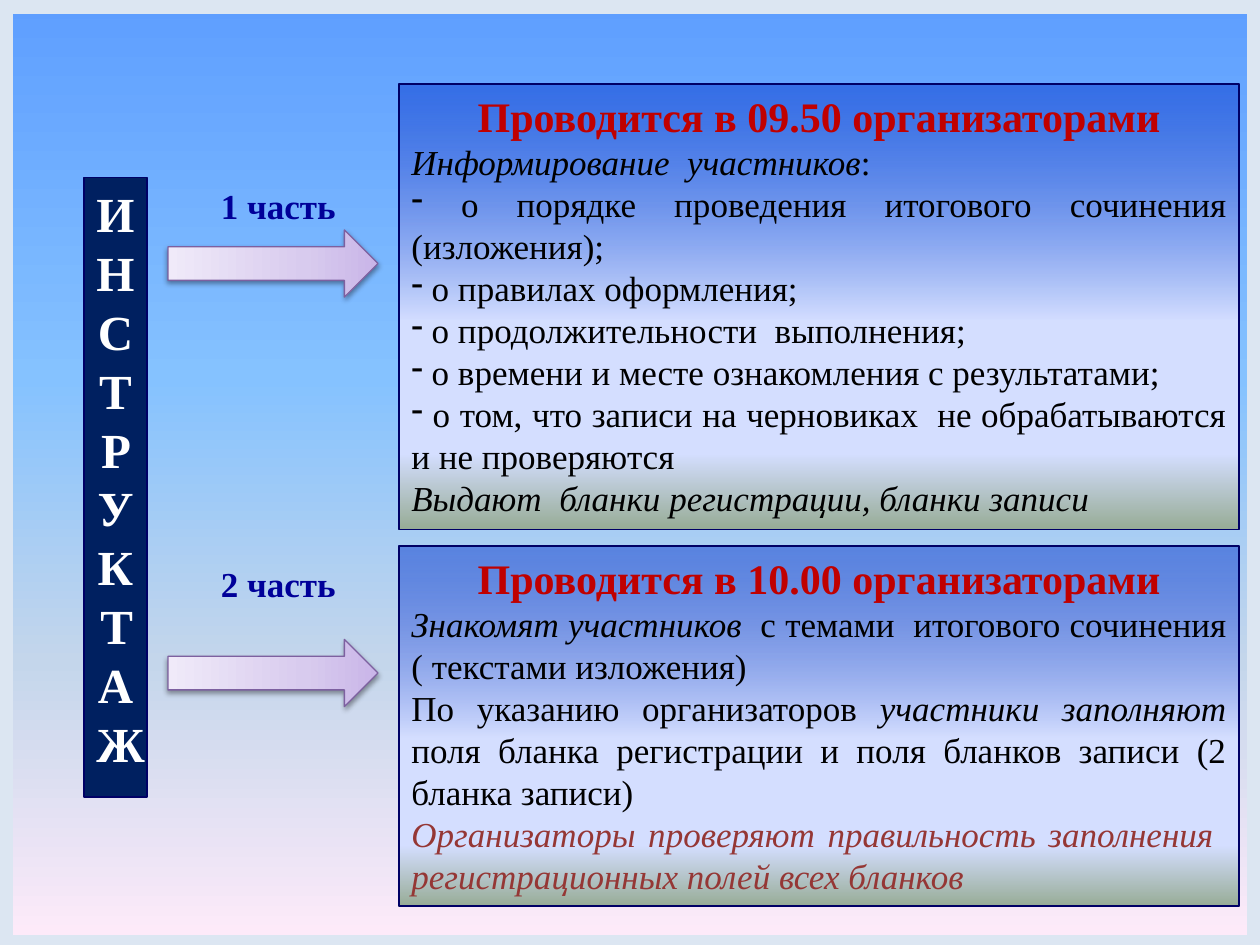
from lxml.etree import SubElement
from pptx import Presentation
from pptx.dml.color import RGBColor
from pptx.enum.shapes import MSO_SHAPE
from pptx.enum.text import MSO_ANCHOR, MSO_AUTO_SIZE, PP_ALIGN
from pptx.oxml.ns import qn
from pptx.util import Inches, Pt

FONT = "Times New Roman"
NAVY, BLACK, RED, MAROON = "000066", "000000", "C00000", "953735"
SKY = [(0, "5E9EFF", 100), (40, "85C2FF", 100), (70, "C4D6EB", 100), (100, "FFEBFA", 100)]
PANEL = [(0, "0033CC", 47), (53, "D4DEFF", 100), (83, "D4DEFF", 100), (100, "96AB94", 100)]
LILAC = [(0, "C9B5E8", 100), (35, "D8CBEE", 100), (100, "F0EAF9", 100)]

deck = Presentation()
deck.slide_width, deck.slide_height = Inches(10), Inches(7.5)
page = deck.slides.add_slide(deck.slide_layouts[6])
column, row = deck.slide_width / 60, deck.slide_height / 45
color = RGBColor.from_string


def blend(fill, element, stops, angle):
    fill.gradient()
    gradient = element.xpath(".//a:gradFill")[0]
    stop_list = gradient.find(qn("a:gsLst"))
    for stop in list(stop_list):
        stop_list.remove(stop)
    for position, shade, opacity in stops:
        stop = SubElement(stop_list, qn("a:gs"), pos=str(position * 1000))
        tint = SubElement(stop, qn("a:srgbClr"), val=shade)
        if opacity < 100:
            SubElement(tint, qn("a:alpha"), val=str(opacity * 1000))
    gradient.find(qn("a:lin")).set("ang", str(angle * 60000))


def add_box(kind, left, top, width, height, line, weight=0.75):
    box = page.shapes.add_shape(kind, int(left * column), int(top * row),
                                int(width * column), int(height * row))
    box.shadow.inherit = False
    box.line.color.rgb = color(line)
    box.line.width = Pt(weight)
    box.text_frame.vertical_anchor = MSO_ANCHOR.TOP
    return box


blend(page.background.fill, page.element, SKY, 90)

frame = add_box(MSO_SHAPE.FRAME, 0, 0.05, 60, 45.1, "DCE6F2", 6)
frame.adjustments[0] = 0.008
frame.fill.solid()
frame.fill.fore_color.rgb = color("DCE6F2")

banner = add_box(MSO_SHAPE.RECTANGLE, -9.25, 21.7, 29.5, 3, NAVY)
banner.rotation = 270
banner.fill.solid()
banner.fill.fore_color.rgb = color("002060")
banner.text_frame.text = "ИНСТРУКТАЖ"
banner.text_frame.word_wrap = True
banner.text_frame._txBody.bodyPr.set("vert", "eaVert")
para = banner.text_frame.paragraphs[0]
para.alignment = PP_ALIGN.CENTER
span = para.runs[0]
span.font.name, span.font.size, span.font.bold = FONT, Pt(28), True
span.font.color.rgb = color("FFFFFF")

for caption, label_row, arrow_row in [("1 часть", 8.5, 7.55), ("2 часть", 26.5, 27.05)]:
    label = page.shapes.add_textbox(int(8 * column), int(label_row * row),
                                    int(10.5 * column), int(2.6 * row))
    label.text_frame.word_wrap = True
    label.text_frame.text = caption
    para = label.text_frame.paragraphs[0]
    para.alignment = PP_ALIGN.CENTER
    span = para.runs[0]
    span.font.name, span.font.size, span.font.bold = FONT, Pt(20), True
    span.font.color.rgb = color("000099")

    arrow = add_box(MSO_SHAPE.DOWN_ARROW, 11.4, arrow_row, 3.2, 10, "7D60A0")
    arrow.rotation = 270
    blend(arrow.fill, arrow.element, LILAC, 270)
    effects = arrow.element.spPr.find(qn("a:effectLst"))
    shadow = SubElement(effects, qn("a:outerShdw"), blurRad=str(Pt(3.1)),
                        dist=str(Pt(1.6)), dir="5400000", rotWithShape="0")
    tint = SubElement(shadow, qn("a:srgbClr"), val=BLACK)
    SubElement(tint, qn("a:alpha"), val="38000")

first_part = [
    (False, [("Информирование  участников", True, BLACK), (":", False, BLACK)]),
    (True, [(" о порядке проведения итогового сочинения (изложения);", False, BLACK)]),
    (True, [(" о правилах оформления;", False, BLACK)]),
    (True, [(" о продолжительности  выполнения;", False, BLACK)]),
    (True, [(" о времени и месте ознакомления с результатами;", False, BLACK)]),
    (True, [(" о том, что записи на черновиках  не обрабатываются и не проверяются",
             False, BLACK)]),
    (False, [("Выдают  бланки регистрации, бланки записи", True, BLACK)]),
]
second_part = [
    (False, [("Знакомят участников ", True, BLACK),
             (" с темами  итогового сочинения ( текстами изложения)", False, BLACK)]),
    (False, [("По указанию организаторов ", False, BLACK),
             ("участники заполняют ", True, BLACK),
             ("поля бланка регистрации и поля бланков записи (2 бланка записи)",
              False, BLACK)]),
    (False, [("Организаторы проверяют правильность заполнения  "
              "регистрационных полей всех бланков", True, MAROON)]),
]

for heading, top, height, body in [
    ("Проводится в 09.50 организаторами", 4, 21.2, first_part),
    ("Проводится в 10.00 организаторами", 26, 17.15, second_part),
]:
    panel = add_box(MSO_SHAPE.RECTANGLE, 19, top, 40, height, NAVY)
    blend(panel.fill, panel.element, PANEL, 90)
    text = panel.text_frame
    text.word_wrap = True
    text.auto_size = MSO_AUTO_SIZE.SHAPE_TO_FIT_TEXT
    text.text = heading
    para = text.paragraphs[0]
    para.alignment = PP_ALIGN.CENTER
    span = para.runs[0]
    span.font.name, span.font.size, span.font.bold = FONT, Pt(24), True
    span.font.color.rgb = color(RED)
    for bulleted, pieces in body:
        para = text.add_paragraph()
        para.alignment = PP_ALIGN.JUSTIFY
        if bulleted:
            properties = para._p.get_or_add_pPr()
            SubElement(properties, qn("a:buFontTx"))
            SubElement(properties, qn("a:buChar"), char="-")
        for words, italic, shade in pieces:
            span = para.add_run()
            span.text = words
            span.font.name, span.font.size, span.font.italic = FONT, Pt(20), italic
            span.font.color.rgb = color(shade)

deck.save("out.pptx")
